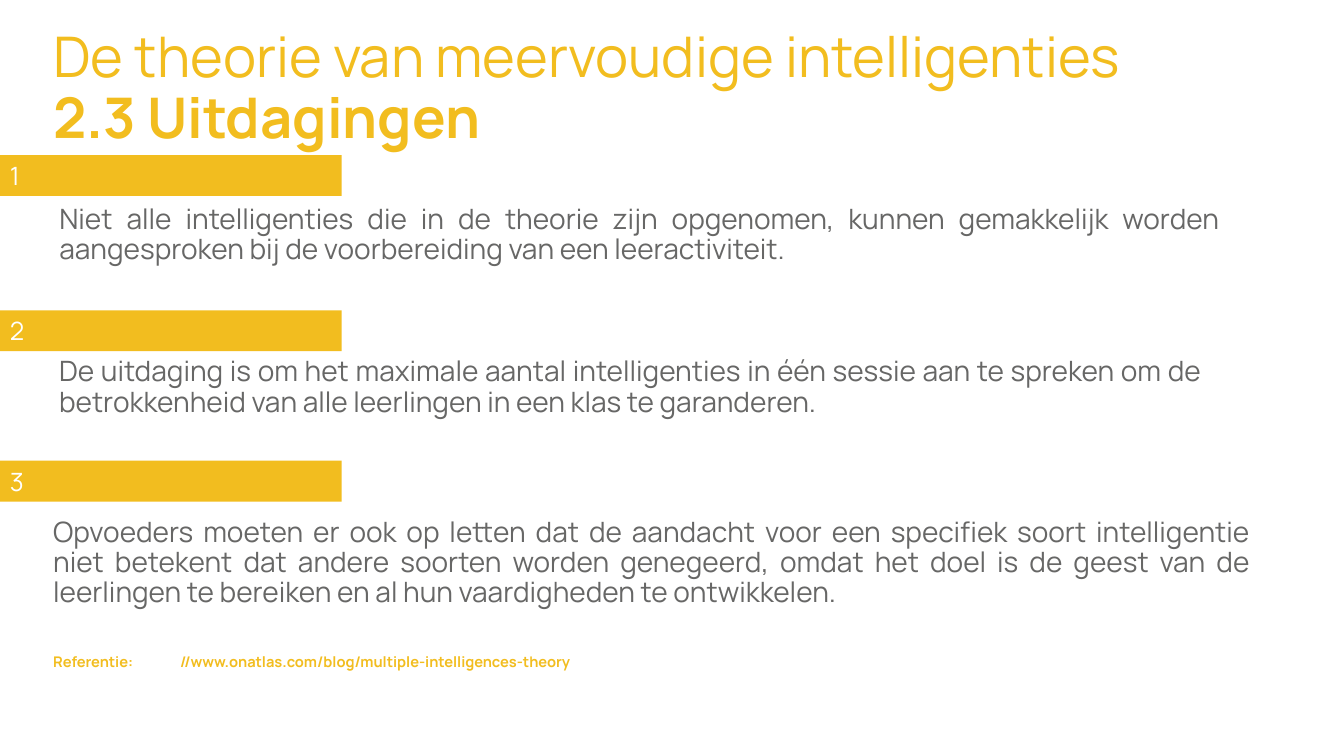
from lxml.etree import SubElement
from pptx import Presentation
from pptx.dml.color import RGBColor
from pptx.enum.shapes import MSO_SHAPE as Shape
from pptx.enum.text import MSO_ANCHOR as Anchor, MSO_AUTO_SIZE as AutoSize, PP_ALIGN as Align
from pptx.oxml.ns import qn
from pptx.util import Cm, Pt

YELLOW = RGBColor(0xF2, 0xBD, 0x1F)
GREY = RGBColor(0x67, 0x67, 0x66)
WHITE = RGBColor(0xFF, 0xFF, 0xFF)
FONT = "Manrope"
BODY_HEIGHT = 2.11

CHALLENGES = [
    (3.91, (1.24, 5.05, 29.77, BODY_HEIGHT),
     "Niet alle intelligenties die in de theorie zijn opgenomen, kunnen gemakkelijk "
     "worden aangesproken bij de voorbereiding van een leeractiviteit."),
    (7.82, (1.24, 8.89, 29.31, BODY_HEIGHT),
     "De uitdaging is om het maximale aantal intelligenties in één sessie aan te spreken "
     "om de betrokkenheid van alle leerlingen in een klas te garanderen."),
    (11.61, (1.09, 12.93, 30.68, 6.12),
     "Opvoeders moeten er ook op letten dat de aandacht voor een specifiek soort "
     "intelligentie niet betekent dat andere soorten worden genegeerd, omdat het doel is "
     "de geest van de leerlingen te bereiken en al hun vaardigheden te ontwikkelen."),
]


def place(box, left, top, width, height):
    """Move and size a box given in centimetres."""
    box.left, box.top, box.width, box.height = map(Cm, (left, top, width, height))


def style(paragraph, size, color, align=Align.LEFT, bold=None):
    """Format a whole paragraph."""
    paragraph.alignment = align
    font = paragraph.font
    font.name, font.size, font.bold = FONT, Pt(size), bold
    font.color.rgb = color


def fill_title(title):
    """Write the two-line title with its bold second line."""
    place(title, 1.09, 0.43, 29.21, 3.68)
    frame = title.text_frame
    frame.auto_size, frame.vertical_anchor = AutoSize.NONE, Anchor.MIDDLE
    heading = frame.paragraphs[0]
    heading.add_run().text = "De theorie van meervoudige intelligenties"
    heading.add_line_break()
    section = heading.add_run()
    section.text = "2.3 Uitdagingen"
    section.font.bold = True
    heading.line_spacing = 0.9
    style(heading, 40, YELLOW)


def add_number_bar(slide, number, top):
    """Draw a yellow bar carrying a challenge number."""
    bar = slide.shapes.add_shape(Shape.RECTANGLE, 0, Cm(top), Cm(8.61), Cm(1.03))
    bar.shadow.inherit = False
    bar.fill.solid()
    bar.fill.fore_color.rgb = YELLOW
    bar.line.fill.background()
    bar.text_frame.text = str(number)
    style(bar.text_frame.paragraphs[0], 18, WHITE)


def fill_challenge(box, area, wording):
    """Write a justified challenge without a bullet."""
    place(box, *area)
    frame = box.text_frame
    frame.word_wrap, frame.auto_size = True, AutoSize.NONE
    frame.vertical_anchor = Anchor.TOP
    frame.text = wording
    challenge = frame.paragraphs[0]
    properties = challenge._p.get_or_add_pPr()
    properties.set("marL", "0")
    properties.set("indent", "0")
    SubElement(properties, qn("a:buNone"))
    challenge.line_spacing = 0.9
    challenge.space_before = Pt(0)
    style(challenge, 20, GREY, Align.JUSTIFY)


def add_reference(box):
    """Add the reference line with its address at a tab stop."""
    reference = box.text_frame.add_paragraph()
    reference.text = "Referentie:\t//www.onatlas.com/blog/multiple-intelligences-theory"
    tabs = SubElement(reference._p.get_or_add_pPr(), qn("a:tabLst"))
    SubElement(tabs, qn("a:tab"), pos=str(Cm(3.2)), algn="l")
    reference.line_spacing = 0.9
    reference.space_before = Pt(33)
    style(reference, 10.5, YELLOW, bold=True)


def main():
    """Build and save the slide."""
    deck = Presentation()
    deck.slide_width, deck.slide_height = Cm(33.87), Cm(19.05)
    slide = deck.slides.add_slide(deck.slide_layouts[1])
    fill_title(slide.shapes.title)
    for number, (bar_top, area, wording) in enumerate(CHALLENGES, 1):
        if number == 1:
            box = slide.placeholders[1]
        else:
            box = slide.shapes.add_textbox(0, 0, 0, 0)
        fill_challenge(box, area, wording)
        add_number_bar(slide, number, bar_top)
    add_reference(box)
    deck.save("out.pptx")


if __name__ == "__main__":
    main()
